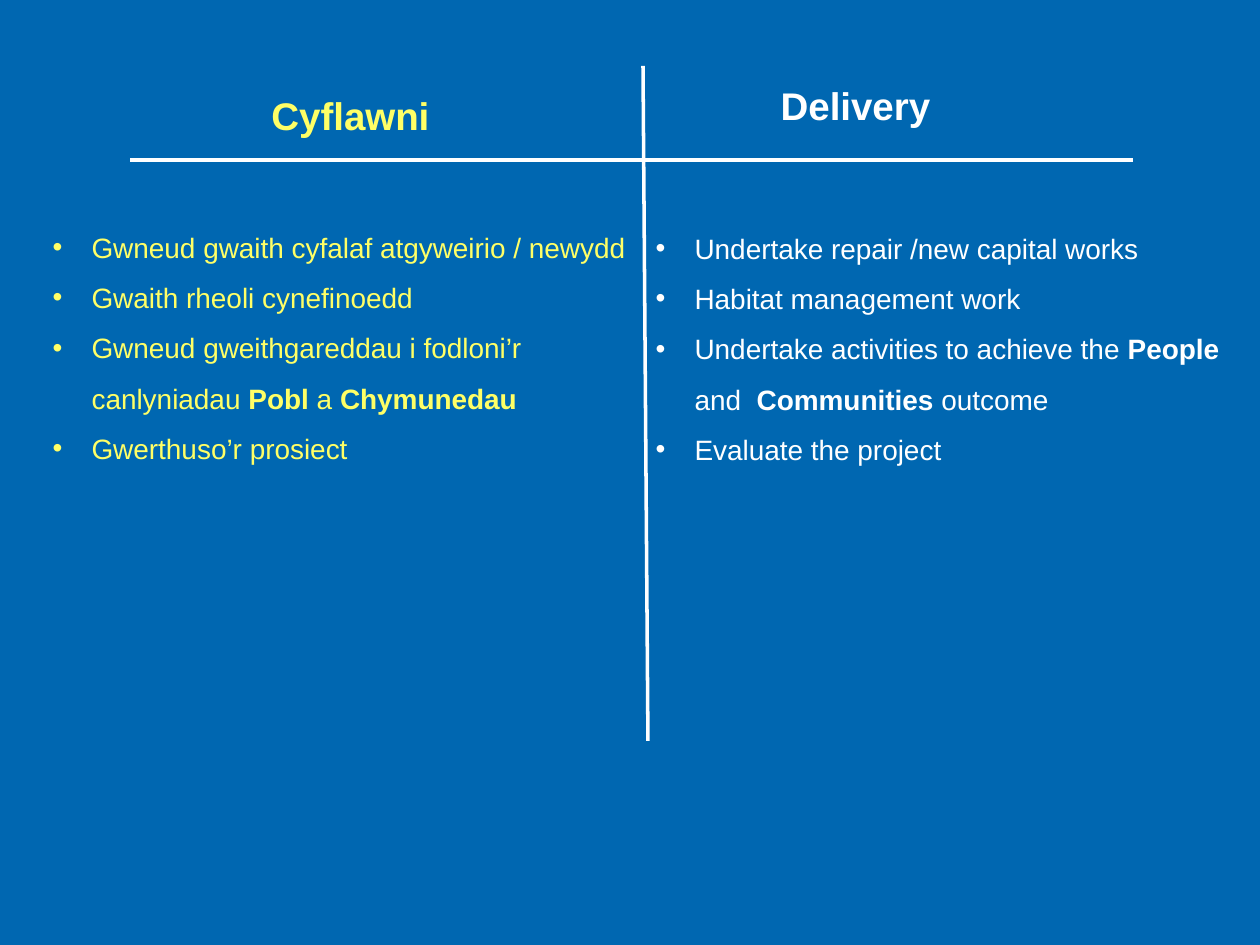
import pptx
import pptx.dml.color
import pptx.enum.shapes
import pptx.enum.text
import pptx.oxml.ns
import pptx.util
from lxml import etree

PX_PER_INCH = 126
BLUE = pptx.dml.color.RGBColor(0x00, 0x67, 0xB1)
WHITE = pptx.dml.color.RGBColor(0xFF, 0xFF, 0xFF)
YELLOW = pptx.dml.color.RGBColor(0xFF, 0xFF, 0x66)

COMPARISON_LAYOUT = 4
HEADING_FONT = {"name": "Arial", "size": pptx.util.Pt(22), "bold": True}
LIST_FONT = {"name": "Arial", "size": pptx.util.Pt(16), "bold": False}
LIST_SPACING = {"line_spacing": 1.5, "space_before": pptx.util.Pt(0)}
BULLET_INDENT = 39

# Each list item is a sequence of runs; every second run is bold.
WELSH_ITEMS = [
    ["Gwneud gwaith cyfalaf atgyweirio / newydd"],
    ["Gwaith rheoli cynefinoedd"],
    ["Gwneud gweithgareddau i fodloni’r canlyniadau ", "Pobl", " a ", "Chymunedau"],
    ["Gwerthuso’r prosiect"],
]
ENGLISH_ITEMS = [
    ["Undertake repair /new capital works"],
    ["Habitat management work"],
    ["Undertake activities to achieve the ", "People", " and  ", "Communities", " outcome"],
    ["Evaluate the project"],
]


def px(length):
    return pptx.util.Emu(round(length * pptx.util.Inches(1) / PX_PER_INCH))


def apply_format(target, values):
    for name, value in values.items():
        setattr(target, name, value)


def place(shape, left, top, width, height):
    """Move a placeholder and align its text to the top."""
    apply_format(shape, {"left": px(left), "top": px(top),
                         "width": px(width), "height": px(height)})
    apply_format(shape.text_frame, {
        "word_wrap": True,
        "vertical_anchor": pptx.enum.text.MSO_ANCHOR.TOP,
        "auto_size": pptx.enum.text.MSO_AUTO_SIZE.NONE,
    })


def fill_heading(shape, text, color, left, top):
    place(shape, left, top, 441, 94)
    paragraph = shape.text_frame.paragraphs[0]
    paragraph.alignment = pptx.enum.text.PP_ALIGN.CENTER
    paragraph.space_before = pptx.util.Pt(0)
    run = paragraph.add_run()
    run.text = text
    apply_format(run.font, HEADING_FONT)
    run.font.color.rgb = color


def add_bullet(paragraph):
    properties = paragraph._p.get_or_add_pPr()
    properties.set("marL", str(px(BULLET_INDENT)))
    properties.set("indent", str(px(-BULLET_INDENT)))
    etree.SubElement(properties, pptx.oxml.ns.qn("a:buFont"), typeface="Arial")
    etree.SubElement(properties, pptx.oxml.ns.qn("a:buChar"), char="•")


def fill_list(shape, items, color, left, top):
    place(shape, left, top, 604, 261)
    frame = shape.text_frame
    frame.auto_size = pptx.enum.text.MSO_AUTO_SIZE.SHAPE_TO_FIT_TEXT
    for item_index, texts in enumerate(items):
        paragraph = frame.add_paragraph() if item_index else frame.paragraphs[0]
        add_bullet(paragraph)
        apply_format(paragraph, LIST_SPACING)
        for run_index, text in enumerate(texts):
            run = paragraph.add_run()
            run.text = text
            apply_format(run.font, LIST_FONT)
            run.font.bold = run_index % 2 == 1
            run.font.color.rgb = color


def add_rule(slide, *ends):
    rule = slide.shapes.add_connector(
        pptx.enum.shapes.MSO_CONNECTOR.STRAIGHT, *map(px, ends))
    rule.line.color.rgb = WHITE
    rule.line.width = pptx.util.Pt(2)
    etree.SubElement(rule._element.spPr, pptx.oxml.ns.qn("a:effectLst"))


def main():
    presentation = pptx.Presentation()
    presentation.slide_width = px(1260)
    presentation.slide_height = px(945)
    slide = presentation.slides.add_slide(
        presentation.slide_layouts[COMPARISON_LAYOUT])
    slide.background.fill.solid()
    slide.background.fill.fore_color.rgb = BLUE

    placeholders = {shape.placeholder_format.idx: shape
                    for shape in slide.placeholders}
    fill_heading(placeholders[0], "Cyflawni", YELLOW, 130, 86)
    fill_heading(placeholders[3], "Delivery", WHITE, 635, 76)
    fill_list(placeholders[2], WELSH_ITEMS, YELLOW, 40, 207)
    fill_list(placeholders[4], ENGLISH_ITEMS, WHITE, 643, 208)
    unused_heading = placeholders[1]._element
    unused_heading.getparent().remove(unused_heading)

    add_rule(slide, 643, 66, 648, 741)
    add_rule(slide, 1133, 160, 130, 160)
    presentation.save("out.pptx")


if __name__ == "__main__":
    main()
